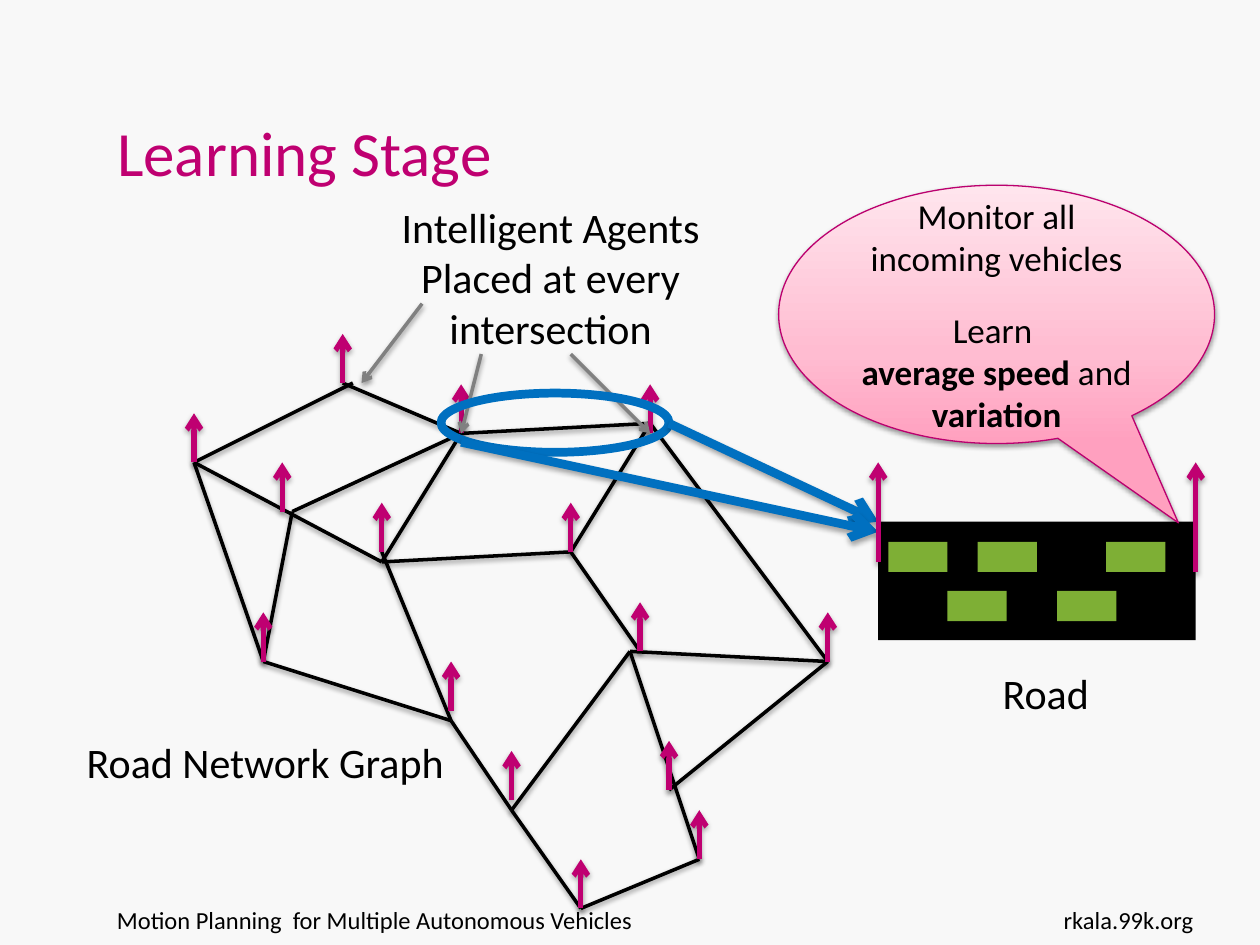
from lxml import etree
from pptx import Presentation
from pptx.dml.color import RGBColor
from pptx.enum.shapes import MSO_CONNECTOR as Connector, MSO_SHAPE as Shape
from pptx.enum.text import MSO_ANCHOR as Anchor, MSO_AUTO_SIZE as AutoSize, PP_ALIGN as Align
from pptx.oxml import parse_xml
from pptx.oxml.ns import nsdecls, qn
from pptx.util import Inches, Pt

BACKGROUND = RGBColor(0xF8, 0xF8, 0xF8)
BLACK = RGBColor(0, 0, 0)
MAGENTA = RGBColor(0xBF, 0x00, 0x71)
CALLOUT_LINE = RGBColor(0xBB, 0x00, 0x6F)
GRAY = RGBColor(0x80, 0x80, 0x80)
BLUE = RGBColor(0x00, 0x70, 0xC0)
GREEN = RGBColor(0x7E, 0xAF, 0x35)
CALLOUT_STOPS = [(0, "FFA0BF"), (35, "FFBCD1"), (100, "FFE5ED")]

NODES = {
    "west": (1.54, 3.67), "north": (2.72, 3.04), "north end": (2.8, 3.04),
    "inner west": (2.32, 4.06), "hub": (3.66, 3.44), "northeast": (5.16, 3.36),
    "center": (3.03, 4.46), "center top": (3.03, 4.38), "middle": (4.53, 4.38),
    "southwest": (2.09, 5.25), "south": (3.58, 5.72), "lower": (4.06, 6.43),
    "fork": (5, 5.17), "fork right": (5.08, 5.17), "east": (6.57, 5.25),
    "bottom": (4.61, 7.21), "bottom right": (5.55, 6.82), "southeast": (5.31, 6.27),
}
ROADS = [
    ("west", "center"), ("inner west", "hub"), ("southwest", "inner west"),
    ("south", "southwest"), ("south", "center top"), ("hub", "center"),
    ("middle", "center"), ("northeast", "hub"), ("lower", "south"),
    ("fork right", "middle"), ("lower", "fork"), ("fork", "east"),
    ("west", "north end"), ("hub", "north"), ("southwest", "west"),
    ("northeast", "middle"), ("east", "northeast"), ("bottom", "lower"),
    ("bottom", "bottom right"), ("southeast", "east"), ("fork", "bottom right"),
]
AGENTS = [
    (2.72, 3.04), (1.54, 3.67), (2.24, 4.06), (3.66, 3.44), (5.16, 3.44),
    (4.53, 4.38), (5.08, 5.17), (6.57, 5.25), (3.03, 4.38), (2.09, 5.25),
    (3.58, 5.64), (4.06, 6.35), (4.61, 7.21), (5.55, 6.82), (5.31, 6.27),
]
AGENT_HEIGHT = 0.39
POINTERS = [
    ((3.35, 2.41), (2.87, 3.04)),
    ((3.82, 2.81), (3.66, 3.44)),
    ((4.53, 2.81), (5.16, 3.44)),
]
VEHICLES = [(7.05, 4.3), (7.76, 4.3), (8.78, 4.3), (7.52, 4.69), (8.39, 4.69)]


def add_shadow(shape, opacity, distance):
    shape._element.spPr.append(parse_xml(
        f'<a:effectLst {nsdecls("a")}><a:outerShdw blurRad="{Pt(3.1)}" '
        f'dist="{Pt(distance)}" dir="5400000" rotWithShape="0"><a:srgbClr val="000000">'
        f'<a:alpha val="{opacity * 1000}"/></a:srgbClr></a:outerShdw></a:effectLst>'))


def add_line(slide, start, end, color, width, arrow=False):
    line = slide.shapes.add_connector(
        Connector.STRAIGHT, *(Inches(value) for value in (*start, *end)))
    line.line.color.rgb = color
    line.line.width = Pt(width)
    if arrow:
        etree.SubElement(line.line._get_or_add_ln(), qn("a:tailEnd"), type="arrow")
    if width > 2:
        add_shadow(line, 35, 1.8)
    else:
        add_shadow(line, 38, 1.6)


def add_shape(slide, kind, box, fill=None, line=None, width=1):
    shape = slide.shapes.add_shape(kind, *(Inches(value) for value in box))
    shape.shadow.inherit = False
    if fill is None:
        shape.fill.background()
    else:
        shape.fill.solid()
        shape.fill.fore_color.rgb = fill
    if line is None:
        shape.line.fill.background()
    else:
        shape.line.color.rgb = line
        shape.line.width = Pt(width)
    return shape


def write_text(paragraph, text, size=24, color=BLACK, bold=False, align=Align.LEFT):
    paragraph.alignment = align
    run = paragraph.add_run()
    run.text = text
    run.font.name = "Calibri"
    run.font.size = Pt(size)
    run.font.bold = bold
    run.font.color.rgb = color


def add_label(slide, box, text, **text_format):
    label = slide.shapes.add_textbox(*(Inches(value) for value in box))
    label.text_frame.word_wrap = True
    write_text(label.text_frame.paragraphs[0], text, **text_format)


def add_title(slide, text):
    title = slide.shapes.title
    title.left, title.top, title.width, title.height = (
        Inches(value) for value in (0.83, 0.3, 6.77, 1.25))
    frame = title.text_frame
    frame.auto_size = AutoSize.NONE
    frame.vertical_anchor = Anchor.BOTTOM
    write_text(frame.paragraphs[0], text, size=36, color=MAGENTA)


def add_network(slide):
    for start, end in ROADS:
        add_line(slide, NODES[start], NODES[end], BLACK, 2)
    for x, y in AGENTS:
        add_line(slide, (x, y), (x, y - AGENT_HEIGHT), MAGENTA, 3, arrow=True)


def add_road_detail(slide):
    add_shape(slide, Shape.OVAL, (3.5, 3.12, 1.81, 0.47), line=BLUE, width=5)
    add_line(slide, (5.31, 3.36), (6.97, 4.14), BLUE, 5, arrow=True)
    add_line(slide, (3.66, 3.51), (6.97, 4.22), BLUE, 5, arrow=True)
    add_shape(slide, Shape.RECTANGLE, (6.97, 4.14, 2.52, 0.94), fill=BLACK)
    add_line(slide, (9.49, 4.54), (9.49, 3.67), MAGENTA, 3, arrow=True)
    add_line(slide, (6.97, 4.46), (6.97, 3.67), MAGENTA, 3, arrow=True)
    for x, y in VEHICLES:
        add_shape(slide, Shape.RECTANGLE, (x, y, 0.47, 0.24), fill=GREEN)


def add_callout(slide):
    callout = add_shape(slide, Shape.OVAL_CALLOUT, (6.18, 1.47, 3.46, 2.05),
                        line=CALLOUT_LINE, width=0.75)
    callout.adjustments[0] = 0.417
    callout.adjustments[1] = 0.807
    properties = callout._element.spPr
    stops = "".join(f'<a:gs pos="{position * 1000}"><a:srgbClr val="{color}"/></a:gs>'
                    for position, color in CALLOUT_STOPS)
    properties.replace(properties.find(qn("a:noFill")), parse_xml(
        f'<a:gradFill {nsdecls("a")} rotWithShape="1"><a:gsLst>{stops}</a:gsLst>'
        '<a:lin ang="16200000" scaled="1"/></a:gradFill>'))
    properties.remove(properties.find(qn("a:effectLst")))
    add_shadow(callout, 38, 1.6)

    frame = callout.text_frame
    frame.word_wrap = True
    frame.vertical_anchor = Anchor.MIDDLE
    style = {"size": 20, "align": Align.CENTER}
    write_text(frame.paragraphs[0], "Monitor all incoming vehicles", **style)
    learn = frame.add_paragraph()
    learn.space_before = Pt(17)
    write_text(learn, "Learn ", **style)
    subject = frame.add_paragraph()
    write_text(subject, "average speed ", bold=True, **style)
    write_text(subject, "and ", **style)
    write_text(subject, "variation", bold=True, **style)


def main():
    presentation = Presentation()
    presentation.slide_width = Inches(10)
    presentation.slide_height = Inches(7.5)
    slide = presentation.slides.add_slide(presentation.slide_layouts[5])
    slide.background.fill.solid()
    slide.background.fill.fore_color.rgb = BACKGROUND

    add_label(slide, (0.83, 7.13, 6.93, 0.52),
              "Motion Planning  for Multiple Autonomous Vehicles", size=14)
    add_title(slide, "Learning Stage")
    add_label(slide, (8.07, 7.13, 1.5, 0.52), "rkala.99k.org", size=14, align=Align.RIGHT)
    add_network(slide)
    add_label(slide, (0.59, 5.8, 3.7, 0.5), "Road Network Graph")
    add_label(slide, (2.64, 1.55, 3.46, 1.31),
              "Intelligent Agents Placed at every intersection", align=Align.CENTER)
    for start, end in POINTERS:
        add_line(slide, start, end, GRAY, 2, arrow=True)
    add_road_detail(slide)
    add_label(slide, (7.2, 5.25, 2.2, 0.5), "Road", align=Align.CENTER)
    add_callout(slide)
    presentation.save("out.pptx")


if __name__ == "__main__":
    main()
